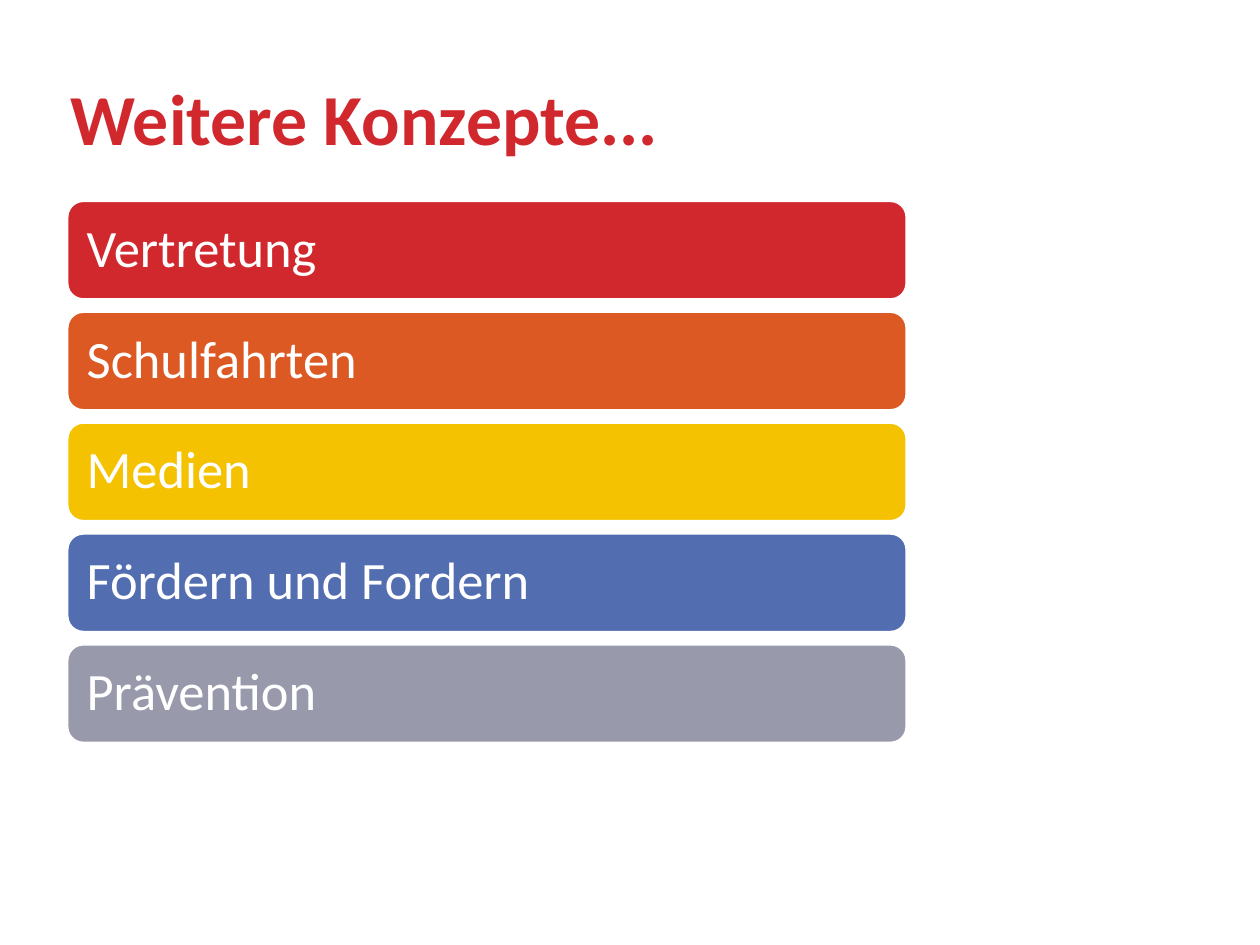
from pptx import Presentation
from pptx.dml.color import RGBColor
from pptx.enum.shapes import MSO_SHAPE
from pptx.enum.text import MSO_ANCHOR, PP_ALIGN
from pptx.util import Inches, Pt

TITLE = "Weitere Konzepte..."
RED, WHITE = "D1282E", "FFFFFF"
BARS = [
    ("Vertretung", RED),
    ("Schulfahrten", "DC5924"),
    ("Medien", "F5C201"),
    ("Fördern und Fordern", "526DB0"),
    ("Prävention", "989AAC"),
]
LEFT, TOP, WIDTH, HEIGHT, STEP = 0.53, 1.59, 6.67, 0.79, 0.88


def paint(target, color):
    target.fill.solid()
    target.fill.fore_color.rgb = RGBColor.from_string(color)


def write(shape, text, size, color, inset, bold=False):
    frame = shape.text_frame
    frame.text = text
    frame.word_wrap = True
    frame.vertical_anchor = MSO_ANCHOR.MIDDLE
    frame.margin_left = frame.margin_right = Inches(inset)
    frame.margin_top = frame.margin_bottom = Inches(inset)
    para = frame.paragraphs[0]
    para.alignment = PP_ALIGN.LEFT
    font = para.runs[0].font
    font.name, font.size, font.bold = "Calibri", Pt(size), bold
    font.color.rgb = RGBColor.from_string(color)
    return para


def main():
    deck = Presentation()
    deck.slide_width, deck.slide_height = Inches(10), Inches(7.5)
    slide = deck.slides.add_slide(deck.slide_layouts[6])
    paint(slide.background, WHITE)

    title = slide.shapes.add_textbox(Inches(0.5), 0, Inches(9), Inches(1.85))
    write(title, TITLE, 41, RED, 0.06, bold=True)

    for row, (label, color) in enumerate(BARS):
        bar = slide.shapes.add_shape(
            MSO_SHAPE.ROUNDED_RECTANGLE, Inches(LEFT), Inches(TOP + row * STEP),
            Inches(WIDTH), Inches(HEIGHT))
        bar.shadow.inherit = False
        paint(bar, color)
        paint(bar.line, WHITE)
        bar.line.width = Pt(2)
        write(bar, label, 30, WHITE, 0.12).line_spacing = 0.9

    deck.save("out.pptx")


if __name__ == "__main__":
    main()
